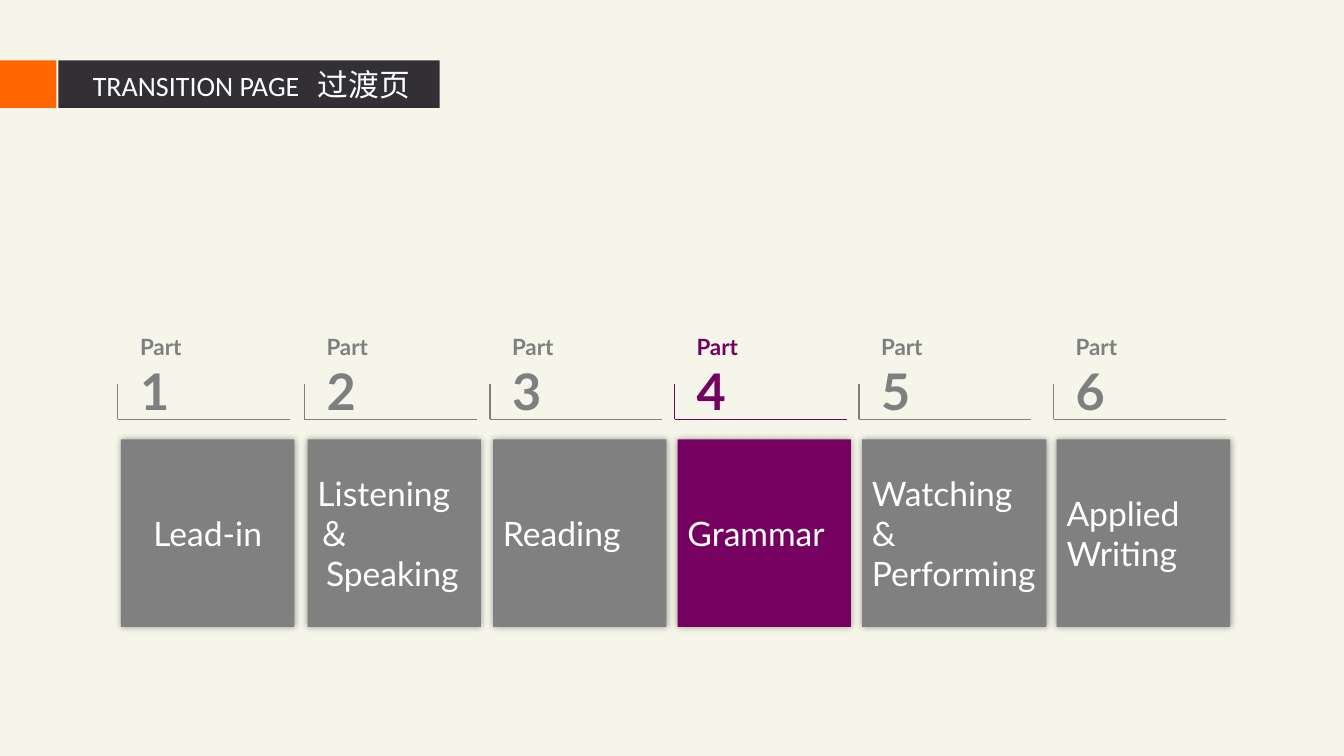
"""Build the transition slide that leads into part four."""
import pptx
import pptx.dml.color
import pptx.enum.shapes
import pptx.enum.text
import pptx.oxml
import pptx.oxml.ns
import pptx.util
from lxml import etree

HUES = {
    "page": "F5F5EA", "dark": "323034", "spot": "FF6600", "white": "FFFFFF",
    "now": "75005F", "tile": "808080", "mute": "7F7F7F", "shade": "000000",
}
LATO, CALI, NOTO = "Lato", "Calibri", "Noto Sans CJK SC"
TITLE = [("TRANSITION PAGE", 20, CALI), ("\t", 20, CALI), ("过渡页", 22, NOTO)]
NOW = 4
PARTS = [
    (1.2, 1.72, [[("Lead-in", LATO)]]),
    (3.05, 1.72, [[("Listening ", LATO), ("＆", CALI)], [(" Speaking", LATO)]]),
    (4.89, 1.72, [[("Reading", LATO)]]),
    (6.72, 1.72, [[("Grammar", LATO)]]),
    (8.55, 1.83, [[("Watching & Performing", LATO)]]),
    (10.48, 1.72, [[("Applied Writing", LATO)]]),
]
TOP, TALL = 4.36, 1.86
RULE, TICK, SPAN = 4.16, 0.35, 1.71
BAR, HIGH = 0.6, 0.47

inch = pptx.util.Inches
ALIGN = pptx.enum.text.PP_ALIGN


def hue(name):
    return pptx.dml.color.RGBColor.from_string(HUES[name])


def style(font, size, color, name=None, bold=False):
    font.size = pptx.util.Pt(size)
    font.color.rgb = hue(color)
    font.bold = bold
    if name:
        font.name = name


def add_run(para, text, name):
    run = para.add_run()
    run.text = text
    run.font.name = name
    east = etree.SubElement(run.font._element, pptx.oxml.ns.qn("a:ea"))
    east.set("typeface", name)
    return run


def add_box(slide, left, top, wide, tall, color):
    kind = pptx.enum.shapes.MSO_SHAPE.RECTANGLE
    box = slide.shapes.add_shape(kind, *map(inch, (left, top, wide, tall)))
    box.fill.solid()
    box.fill.fore_color.rgb = hue(color)
    box.line.fill.background()
    box.shadow.inherit = False
    box.text_frame.word_wrap = True
    box.text_frame.vertical_anchor = pptx.enum.text.MSO_ANCHOR.MIDDLE
    return box


def add_glow(box):
    glow = pptx.oxml.parse_xml(
        f'<a:outerShdw {pptx.oxml.ns.nsdecls("a")} blurRad="63500" dist="0" dir="0" '
        f'algn="ctr" rotWithShape="0"><a:srgbClr val="{HUES["shade"]}">'
        '<a:alpha val="40000"/></a:srgbClr></a:outerShdw>')
    box._element.spPr.find(pptx.oxml.ns.qn("a:effectLst")).append(glow)


def add_line(slide, ends, color):
    kind = pptx.enum.shapes.MSO_CONNECTOR.STRAIGHT
    line = slide.shapes.add_connector(kind, *map(inch, ends))
    line.line.color.rgb = hue(color)
    line.line.width = pptx.util.Pt(0.75)
    etree.SubElement(line._element.spPr, pptx.oxml.ns.qn("a:effectLst"))


def add_title(slide):
    add_box(slide, 0, BAR, 0.56, HIGH, "spot")
    frame = add_box(slide, 0.58, BAR, 3.78, HIGH, "dark").text_frame
    frame.margin_left = inch(0.34)
    para = frame.paragraphs[0]
    para.alignment = ALIGN.LEFT
    tabs = etree.SubElement(para._p.get_or_add_pPr(), pptx.oxml.ns.qn("a:tabLst"))
    tab = etree.SubElement(tabs, pptx.oxml.ns.qn("a:tab"))
    tab.set("pos", str(inch(2.23)))
    tab.set("algn", "l")
    for text, size, name in TITLE:
        style(add_run(para, text, name).font, size, "white")


def add_part(slide, num, left, wide, lines):
    now = num == NOW
    ink = "now" if now else "mute"
    box = add_box(slide, left, TOP, wide, TALL, "now" if now else "tile")
    add_glow(box)
    for row, runs in enumerate(lines):
        frame = box.text_frame
        para = frame.add_paragraph() if row else frame.paragraphs[0]
        para.alignment = ALIGN.CENTER if num == 1 else ALIGN.LEFT
        for text, name in runs:
            style(add_run(para, text, name).font, 24, "white")

    edge = left - 0.03
    add_line(slide, (edge, RULE, edge + SPAN, RULE), ink)
    add_line(slide, (edge, RULE, edge, RULE - TICK), ink)
    label = slide.shapes.add_textbox(*map(inch, (left + 0.09, 3.26, 0.91, 0.98)))
    frame = label.text_frame
    frame.word_wrap = True
    frame.text = f"Part\n{num}"
    for para, size in zip(frame.paragraphs, (16, 36)):
        style(para.font, size, ink, LATO, True)


def main():
    deck = pptx.Presentation()
    deck.slide_width, deck.slide_height = inch(13.33), inch(7.5)
    slide = deck.slides.add_slide(deck.slide_layouts[6])
    slide.background.fill.solid()
    slide.background.fill.fore_color.rgb = hue("page")
    add_title(slide)
    for num, part in enumerate(PARTS, 1):
        add_part(slide, num, *part)
    deck.save("out.pptx")


if __name__ == "__main__":
    main()
